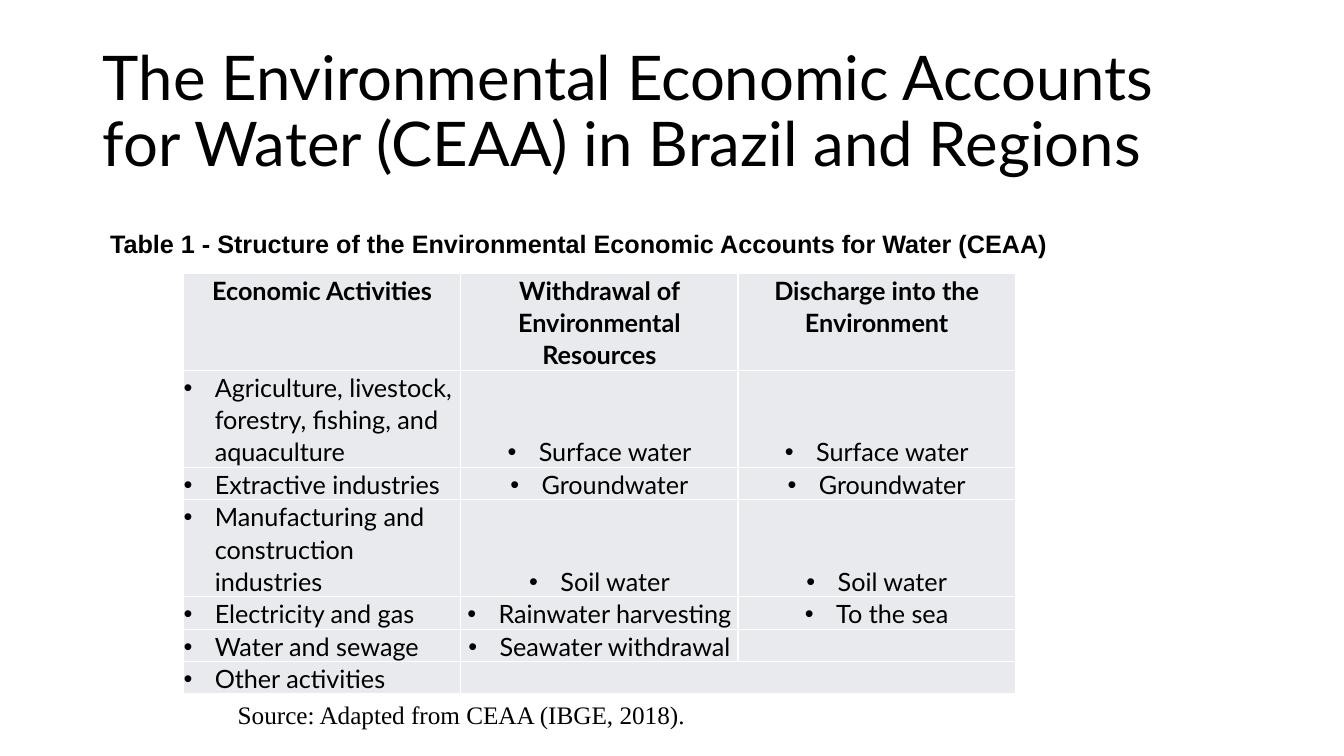
from lxml.etree import SubElement
from pptx import Presentation
from pptx.dml.color import RGBColor
from pptx.enum.text import MSO_ANCHOR, MSO_AUTO_SIZE, PP_ALIGN
from pptx.oxml.ns import qn
from pptx.util import Inches, Pt

BLACK = RGBColor(0x00, 0x00, 0x00)
WHITE = RGBColor(0xFF, 0xFF, 0xFF)
CELL_GREY = RGBColor(0xE8, 0xEA, 0xED)

HEADINGS = (
    "Economic Activities",
    "Withdrawal of Environmental Resources",
    "Discharge into the Environment",
)
ACCOUNTS = (
    ("Agriculture, livestock, forestry, fishing, and aquaculture", "Surface water", "Surface water"),
    ("Extractive industries", "Groundwater", "Groundwater"),
    ("Manufacturing and construction industries", "Soil water", "Soil water"),
    ("Electricity and gas", "Rainwater harvesting", "To the sea"),
    ("Water and sewage", "Seawater withdrawal", ""),
    ("Other activities", "", ""),
)
ROW_HEIGHTS = (0.76, 0.76, 0.25, 0.76, 0.25, 0.25, 0.25)
COLUMN_WIDTH = 2.75


def set_font(para, name, size, bold=False):
    para.font.name = name
    para.font.size = Pt(size)
    para.font.bold = bold
    para.font.color.rgb = BLACK


def add_bullet(para):
    properties = para._p.get_or_add_pPr()
    properties.set("marL", str(Inches(0.31)))
    properties.set("indent", str(-Inches(0.31)))
    SubElement(properties, qn("a:buFont"), typeface="Arial")
    SubElement(properties, qn("a:buChar"), char="•")


def add_borders(cell):
    properties = cell._tc.get_or_add_tcPr()
    for side in ("a:lnL", "a:lnR", "a:lnT", "a:lnB"):
        line = SubElement(properties, qn(side), w=str(Pt(1)))
        fill = SubElement(line, qn("a:solidFill"))
        SubElement(fill, qn("a:srgbClr"), val=str(WHITE))


def fill_cell(cell, text, is_heading, is_centred):
    add_borders(cell)
    cell.fill.solid()
    cell.fill.fore_color.rgb = CELL_GREY
    cell.margin_left = cell.margin_right = cell.margin_top = cell.margin_bottom = 0
    cell.vertical_anchor = MSO_ANCHOR.TOP if is_heading else MSO_ANCHOR.BOTTOM
    para = cell.text_frame.paragraphs[0]
    if text:
        para.text = text
        if not is_heading:
            add_bullet(para)
    para.alignment = PP_ALIGN.CENTER if is_centred else PP_ALIGN.LEFT
    para.line_spacing = 1.07
    para.space_after = Pt(8)
    set_font(para, "Lato", 18, is_heading)


def add_accounts_table(page):
    rows = (HEADINGS, *ACCOUNTS)
    frame = page.shapes.add_table(
        len(rows), len(HEADINGS), Inches(1.82), Inches(2.71),
        Inches(COLUMN_WIDTH * len(HEADINGS)), Inches(sum(ROW_HEIGHTS)),
    )
    table = frame.table
    for column in table.columns:
        column.width = Inches(COLUMN_WIDTH)
    for row_index, texts in enumerate(rows):
        table.rows[row_index].height = Inches(ROW_HEIGHTS[row_index])
        is_heading = row_index == 0
        for column_index, text in enumerate(texts):
            is_centred = is_heading or column_index > 0
            fill_cell(table.cell(row_index, column_index), text, is_heading, is_centred)
    last = len(rows) - 1
    table.cell(last, 1).merge(table.cell(last, 2))


def add_title(page, text):
    title = page.shapes.title
    title.left, title.top = Inches(0.92), Inches(0.4)
    title.width, title.height = Inches(11.5), Inches(1.45)
    frame = title.text_frame
    frame.text = text
    frame.auto_size = MSO_AUTO_SIZE.NONE
    frame.vertical_anchor = MSO_ANCHOR.MIDDLE
    para = frame.paragraphs[0]
    para.alignment = PP_ALIGN.LEFT
    para.line_spacing = 0.9
    set_font(para, "Lato", 44)


def add_label(page, text, left, top, width, font_name, bold=False,
              alignment=PP_ALIGN.LEFT, anchor=MSO_ANCHOR.TOP):
    box = page.shapes.add_textbox(Inches(left), Inches(top), Inches(width), Inches(0.4))
    frame = box.text_frame
    frame.word_wrap = True
    frame.auto_size = MSO_AUTO_SIZE.SHAPE_TO_FIT_TEXT
    frame.vertical_anchor = anchor
    para = frame.paragraphs[0]
    para.text = text
    para.alignment = alignment
    set_font(para, font_name, 18, bold)


def main():
    deck = Presentation()
    deck.slide_width, deck.slide_height = Inches(13.33), Inches(7.5)
    page = deck.slides.add_slide(deck.slide_layouts[5])
    add_title(page, "The Environmental Economic Accounts for Water (CEAA) in Brazil and Regions")
    add_accounts_table(page)
    add_label(
        page, "Table 1 - Structure of the Environmental Economic Accounts for Water (CEAA)",
        0.92, 2.22, 9.64, "Arial", True, PP_ALIGN.CENTER, MSO_ANCHOR.MIDDLE,
    )
    add_label(page, "Source: Adapted from CEAA (IBGE, 2018).", 2.26, 6.89, 6.67, "Times New Roman")
    deck.save("out.pptx")


if __name__ == "__main__":
    main()
